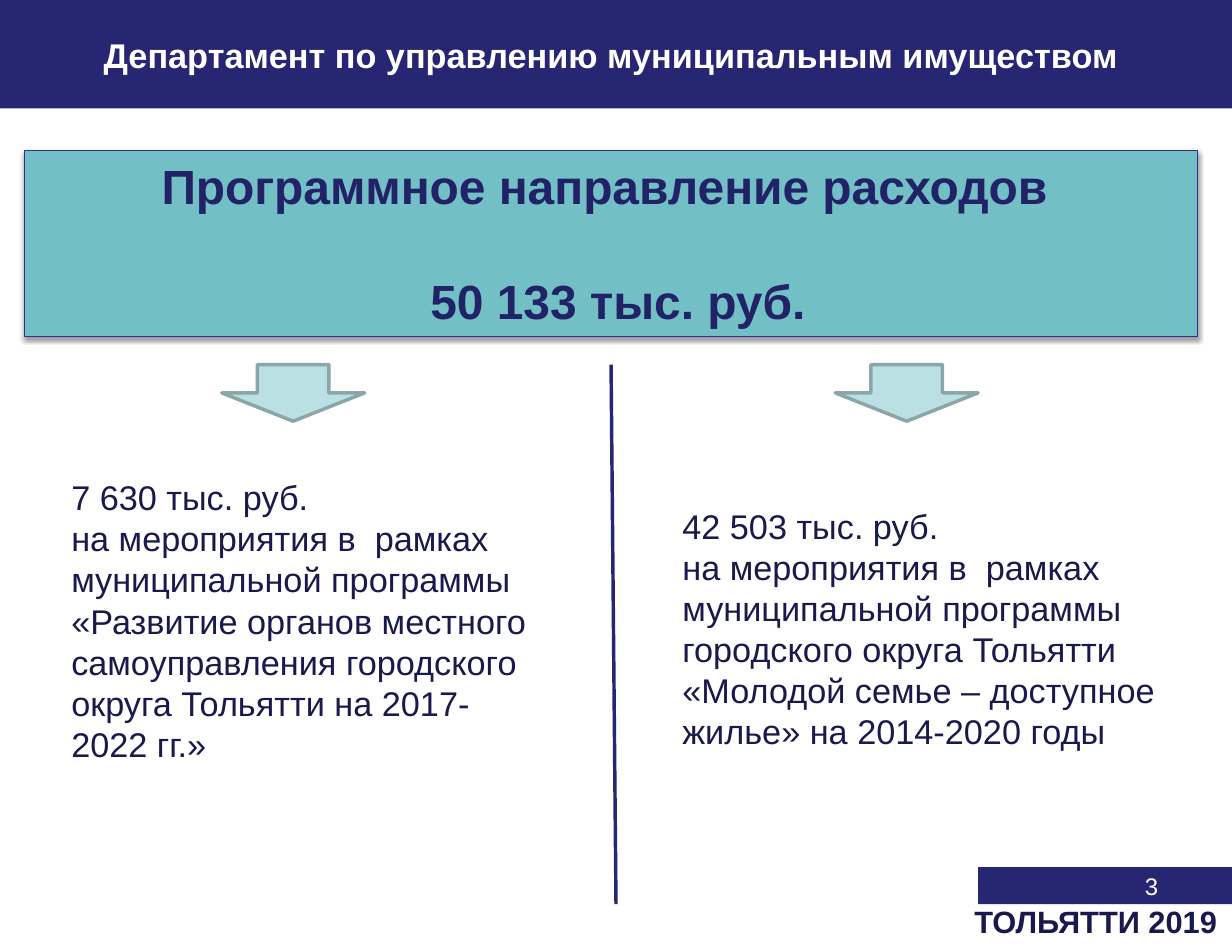
from dataclasses import dataclass

import pptx
import pptx.dml.color
import pptx.enum.shapes
import pptx.enum.text
import pptx.oxml
import pptx.oxml.ns
import pptx.util

PX = 9144  # 100 px to the inch
NAVY, INK, WHITE = "262673", "19194D", "FFFFFF"
KIND = pptx.enum.shapes.MSO_SHAPE
ALIGN = pptx.enum.text.PP_ALIGN
ANCHOR = pptx.enum.text.MSO_ANCHOR
NS = pptx.oxml.ns.nsdecls("a")


@dataclass
class Box:
    left: int
    top: int
    width: int
    height: int

    def emu(self) -> list[int]:
        return [n * PX for n in (self.left, self.top, self.width, self.height)]


@dataclass
class Font:
    size: int
    color: str
    bold: bool = False


@dataclass
class Column:
    text: Box
    arrow: Box
    lines: list[str]


def color(code: str) -> pptx.dml.color.RGBColor:
    return pptx.dml.color.RGBColor.from_string(code)


def draw(slide, kind, box: Box, fill: str, edge: str = "", width: float = 0):
    shape = slide.shapes.add_shape(kind, *box.emu())
    shape.shadow.inherit = False
    shape.fill.solid()
    shape.fill.fore_color.rgb = color(fill)
    if edge:
        shape.line.color.rgb = color(edge)
        shape.line.width = pptx.util.Pt(width)
    else:
        shape.line.fill.background()
    return shape


def write(shape, lines: list[str], font: Font, align=ALIGN.LEFT, anchor=ANCHOR.TOP):
    frame = shape.text_frame
    frame.word_wrap = True
    frame.vertical_anchor = anchor
    for i, line in enumerate(lines):
        para = frame.add_paragraph() if i else frame.paragraphs[0]
        para.alignment = align
        run = para.add_run()
        run.text = line
        run.font.name = "Arial"
        run.font.size = pptx.util.Pt(font.size)
        run.font.bold = font.bold
        run.font.color.rgb = color(font.color)
    return frame


def label(slide, box: Box, lines: list[str], font: Font, align=ALIGN.LEFT):
    return write(slide.shapes.add_textbox(*box.emu()), lines, font, align)


def header(slide) -> None:
    bar = draw(slide, KIND.RECTANGLE, Box(0, 0, 1000, 88), NAVY)
    frame = write(bar, ["Департамент по управлению муниципальным имуществом"],
                  Font(20, WHITE, True), ALIGN.CENTER, ANCHOR.MIDDLE)
    frame.margin_left, frame.margin_top = 10 * PX, 12 * PX
    frame.margin_right, frame.margin_bottom = 18 * PX, 5 * PX
    frame.paragraphs[0].line_spacing = 0.8


def banner(slide) -> None:
    shape = draw(slide, KIND.RECTANGLE, Box(20, 122, 952, 151), "72BFC5", "2F2F98", 0.75)
    effects = shape._element.spPr.find(pptx.oxml.ns.qn("a:effectLst"))
    effects.append(pptx.oxml.parse_xml(
        f'<a:outerShdw {NS} blurRad="39370" dist="20320" dir="5400000" rotWithShape="0">'
        '<a:srgbClr val="000000"><a:alpha val="38000"/></a:srgbClr></a:outerShdw>'))
    frame = write(shape, ["Программное направление расходов ", "50 133 тыс. руб."],
                  Font(28, "222267", True), ALIGN.CENTER)
    total = frame.paragraphs[1]
    total.space_before = pptx.util.Pt(34)
    total._p.get_or_add_pPr().set("marL", str(11 * PX))


def divider(slide) -> None:
    line = slide.shapes.add_connector(pptx.enum.shapes.MSO_CONNECTOR.STRAIGHT,
                                      496 * PX, 296 * PX, 500 * PX, 734 * PX)
    line.line.color.rgb = color(NAVY)
    line.line.width = pptx.util.Pt(2)
    line._element.spPr.append(pptx.oxml.parse_xml(f"<a:effectLst {NS}/>"))


def footer(slide) -> None:
    draw(slide, KIND.RECTANGLE, Box(794, 704, 206, 30), NAVY)
    label(slide, Box(717, 703, 233, 54), ["3"], Font(14, WHITE), ALIGN.RIGHT)
    frame = label(slide, Box(781, 734, 221, 35), ["ТОЛЬЯТТИ 2019"], Font(18, INK, True))
    frame.paragraphs[0].line_spacing = 0.8


COLUMNS = [
    Column(Box(48, 382, 405, 263), Box(180, 296, 116, 46), [
        "7 630 тыс. руб.",
        "на мероприятия в  рамках муниципальной программы «Развитие органов местного "
        "самоуправления городского округа Тольятти на 2017-2022 гг.»"]),
    Column(Box(544, 405, 405, 236), Box(678, 296, 116, 46), [
        "42 503 тыс. руб.",
        "на мероприятия в  рамках муниципальной программы городского округа Тольятти "
        "«Молодой семье – доступное жилье» на 2014-2020 годы"]),
]


def main() -> None:
    deck = pptx.Presentation()
    deck.slide_width, deck.slide_height = 1000 * PX, 772 * PX
    slide = deck.slides.add_slide(deck.slide_layouts[6])
    footer(slide)
    header(slide)
    divider(slide)
    banner(slide)
    for col in COLUMNS:
        label(slide, col.text, col.lines, Font(20, INK))
        draw(slide, KIND.DOWN_ARROW, col.arrow, "BBE0E3", "8AA6A8", 2)
    deck.save("out.pptx")


if __name__ == "__main__":
    main()
